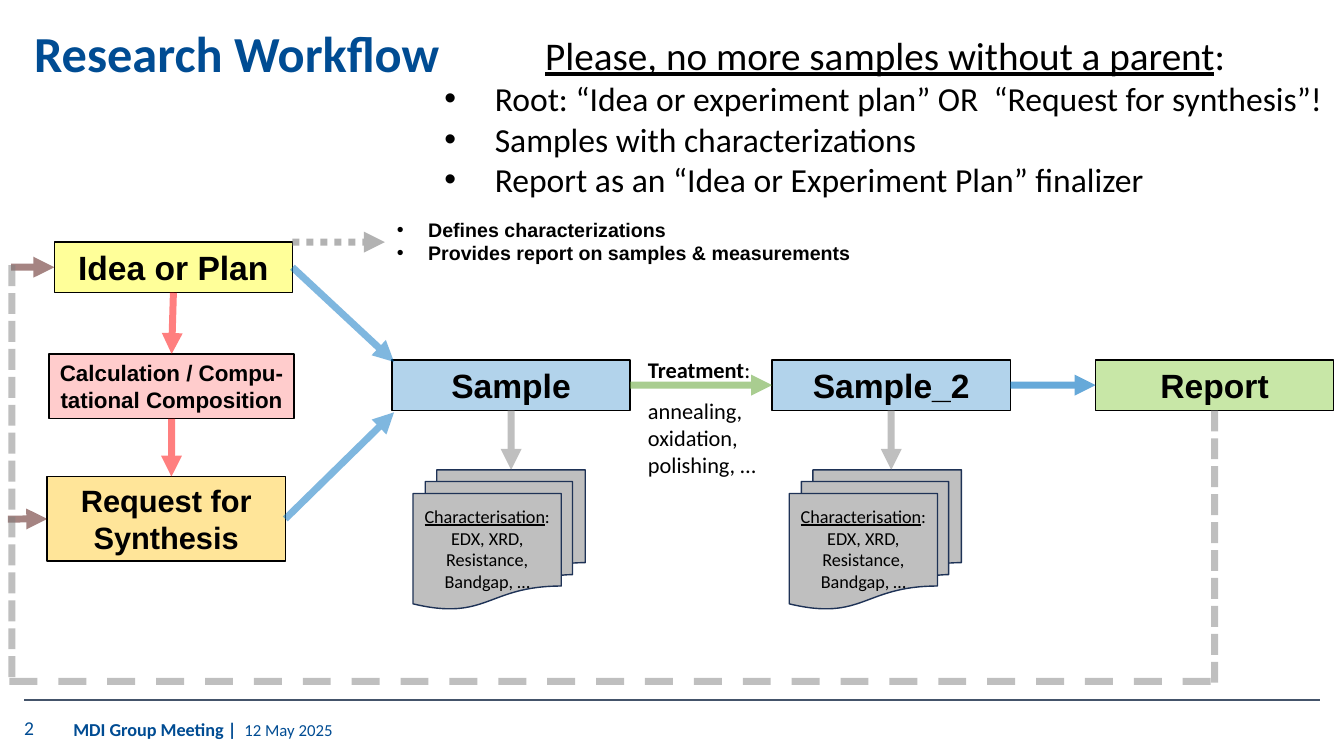
from pptx import Presentation
from pptx import util as u
from pptx.dml.color import RGBColor
from pptx.enum import dml, shapes, text
from pptx.oxml.ns import qn
from lxml import etree


class Theme:
    heading, body = "Calibri", "Arial"
    ink, brand, rule = "000000", "004C93", "44546A"
    blue, red, brown, grey, green = "0070C0", "FF0000", "4C0B07", "808080", "70AD47"
    yellow, amber, lime, sheet_edge = "FFFF00", "FFC000", "92D050", "1E3256"
    title, advice, advice_item, node = 36, 28, 24, 24
    request, calculation, plan_role, sheet = 22, 16, 14, 13
    number, meeting, date, flow, edge = 14, 13, 12, 5, 1


T = Theme
BOX_W, BOX_H, ROW_TOP = 6, 1.27, 9.07
SHEET_W, SHEET_H, SHEET_TOP = 4.34, 3.51, 11.84

# Content: lengths in cm, opacity in percent
# name: (label, left, top, width, height, colour, opacity, type size)
BOXES = {
    "idea": ("Idea or Plan", 1.37, 6.1, BOX_W, BOX_H, T.yellow, 40, T.node),
    "calculation": ("Calculation / Compu-tational Composition",
                    1.24, 8.92, 6.17, 1.63, T.red, 20, T.calculation),
    "request": ("Request for Synthesis", 1.19, 12.01, BOX_W, 2.13, T.amber, 40, T.request),
    "sample": ("Sample", 9.88, ROW_TOP, BOX_W, BOX_H, T.blue, 30, T.node),
    "sample_2": ("Sample_2", 19.46, ROW_TOP, BOX_W, BOX_H, T.blue, 30, T.node),
    "report": ("Report", 27.61, ROW_TOP, BOX_W, BOX_H, T.lime, 50, T.node),
}
SHEET_OWNERS = ("sample", "sample_2")
SHEET_OFFSET = 0.53
SHEET_TEXT = [("Characterisation", {"underline": True}), (":", {}), ("\v", {}),
              ("EDX, XRD, Resistance, Bandgap, …", {})]

# Ends are points or (box, side); sides run 0 top, 1 left, 2 bottom, 3 right
TOP, LEFT, BOTTOM, RIGHT = range(4)
ARROWS = [
    (("idea", BOTTOM), ("calculation", TOP), T.red, 50),
    (("calculation", BOTTOM), (4.32, 12.01), T.red, 50),
    (("idea", RIGHT), (9.93, 9.12), T.blue, 50),
    (("request", RIGHT), (9.93, 10.39), T.blue, 50),
    (("sample", RIGHT), ("sample_2", LEFT), T.green, 60),
    (("sample_2", RIGHT), ("report", LEFT), T.blue, 60),
    ((0.28, 6.73), ("idea", LEFT), T.brown, 50),
    ((0.2, 13.08), ("request", LEFT), T.brown, 50),
]
FEEDBACK = [
    (("report", BOTTOM), (30.61, 17.25), dml.MSO_LINE.SQUARE_DOT),
    ((30.51, 17.17), (0.23, 17.17), dml.MSO_LINE.DASH),
    ((0.3, 6.68), (0.3, 17.17), dml.MSO_LINE.SQUARE_DOT),
]

ADVICE_TITLE = [("Please, no more samples without a parent", {"underline": True}), (":", {})]
ADVICE = ["Root: “Idea or experiment plan” OR  “Request for synthesis”!",
          "Samples with characterizations",
          "Report as an “Idea or Experiment Plan” finalizer"]
PLAN_ROLES = ["Defines characterizations", "Provides report on samples & measurements"]
TREATMENT = [[("Treatment", {"bold": True}), (":", {})],
             "annealing,", "oxidation,", "polishing, …"]
FOOTER = [("MDI Group Meeting | ", {"bold": True}), (" 12 May 2025", {"size": u.Pt(T.date)})]

prs = Presentation()
prs.slide_width, prs.slide_height = u.Cm(33.87), u.Cm(19.05)
slide = prs.slides.add_slide(prs.slide_layouts[6])


def rgb(value):
    return RGBColor.from_string(value)


def set_opacity(shape, percent):
    colour = next(shape.element.spPr.iter(qn("a:srgbClr")))
    etree.SubElement(colour, qn("a:alpha"), val=str(percent * 1000))


def write(paragraph, content, size, font, colour=T.ink, bold=False):
    """Content is a string, or a list of (string, font settings)."""
    if isinstance(content, str):
        content = [(content, {})]
    for words, settings in content:
        if words == "\v":
            paragraph.add_line_break()
            continue
        run = paragraph.add_run()
        run.text = words
        run.font.name, run.font.size, run.font.bold = font, u.Pt(size), bold
        run.font.color.rgb = rgb(colour)
        for key, value in settings.items():
            setattr(run.font, key, value)


def set_indent(paragraph, left, hanging=0.0):
    props = paragraph._p.get_or_add_pPr()
    props.set("marL", str(u.Cm(left)))
    props.set("indent", str(-u.Cm(hanging)))
    if hanging:
        etree.SubElement(props, qn("a:buFont"), typeface="Arial")
        etree.SubElement(props, qn("a:buChar"), char="•")


def add_text(left, top, width, height, lines, size, font,
             anchor=text.MSO_ANCHOR.TOP, **style):
    frame = slide.shapes.add_textbox(*map(u.Cm, (left, top, width, height))).text_frame
    frame.word_wrap, frame.vertical_anchor = True, anchor
    for i, line in enumerate(lines):
        paragraph = frame.add_paragraph() if i else frame.paragraphs[0]
        write(paragraph, line, size, font, **style)
    return frame


def add_block(kind, frame_cm, colour, opacity, edge, content, size, font, anchor, bold):
    block = slide.shapes.add_shape(kind, *map(u.Cm, frame_cm))
    block.shadow.inherit = False
    block.fill.solid()
    block.fill.fore_color.rgb = rgb(colour)
    set_opacity(block, opacity)
    block.line.color.rgb, block.line.width = rgb(edge), u.Pt(T.edge)
    block.text_frame.word_wrap, block.text_frame.vertical_anchor = True, anchor
    paragraph = block.text_frame.paragraphs[0]
    paragraph.alignment = text.PP_ALIGN.CENTER
    write(paragraph, content, size, font, bold=bold)
    return block


def add_line(start, end, colour, opacity=100, width=T.flow, dash=None, arrow=False):
    joined = [isinstance(point[0], str) for point in (start, end)]
    ends = [(0, 0) if is_box else point for is_box, point in zip(joined, (start, end))]
    line = slide.shapes.add_connector(shapes.MSO_CONNECTOR.STRAIGHT,
                                      *(u.Cm(n) for point in ends for n in point))
    if joined[0]:
        line.begin_connect(nodes[start[0]], start[1])
    if joined[1]:
        line.end_connect(nodes[end[0]], end[1])
    line.line.color.rgb, line.line.width = rgb(colour), u.Pt(width)
    if dash:
        line.line.dash_style = dash
    if opacity < 100:
        set_opacity(line, opacity)
    if arrow:
        etree.SubElement(line.element.spPr.find(qn("a:ln")), qn("a:tailEnd"), type="triangle")
    etree.SubElement(line.element.spPr, qn("a:effectLst"))


# Title and footer
heading = add_text(0.61, 0.3, 11, 2.21, ["Research Workflow"], T.title, T.heading,
                   text.MSO_ANCHOR.MIDDLE, colour=T.brand, bold=True)
heading.paragraphs[0].line_spacing = 0.9
add_line((0.61, 17.63), (33.27, 17.63), T.rule, width=1.5)
number = add_text(0.61, 17.75, 1.35, 1.19, ["2"], T.number, T.heading,
                  text.MSO_ANCHOR.MIDDLE, colour=T.brand)
number.margin_left = 0
add_text(1.6, 17.7, 13.87, 1.35, [FOOTER], T.meeting, T.heading,
         text.MSO_ANCHOR.MIDDLE, colour=T.brand)

# Workflow boxes
nodes = {}
for name, (label, *frame_cm, colour, opacity, size) in BOXES.items():
    nodes[name] = add_block(shapes.MSO_SHAPE.RECTANGLE, frame_cm, colour, opacity, T.ink,
                            label, size, T.body, text.MSO_ANCHOR.TOP, True)

# Characterisation sheets under the samples
for owner in SHEET_OWNERS:
    left = BOXES[owner][1]
    sheet_left = left + (SHEET_OFFSET if owner == "sample" else SHEET_OFFSET - 0.1)
    add_block(shapes.MSO_SHAPE.FLOWCHART_MULTIDOCUMENT,
              (sheet_left, SHEET_TOP, SHEET_W, SHEET_H), T.grey, 50, T.sheet_edge,
              SHEET_TEXT, T.sheet, T.heading, text.MSO_ANCHOR.MIDDLE, False)
    add_line((owner, BOTTOM), (left + BOX_W / 2, SHEET_TOP), T.grey, 50, arrow=True)

# Flow arrows and the feedback loop
for start, end, colour, opacity in ARROWS:
    add_line(start, end, colour, opacity, arrow=True)
for start, end, dash in FEEDBACK:
    add_line(start, end, T.grey, 50, dash=dash)
add_line((7.37, 6.1), (9.7, 6.1), T.grey, 60, dash=dml.MSO_LINE.ROUND_DOT, arrow=True)

# Treatment note
treatment = add_text(16.08, 8.86, 3.38, 3.33, TREATMENT, T.calculation, T.heading)
treatment.paragraphs[1].space_before = u.Pt(10)

# Role of the plan
roles = add_text(9.75, 5.36, 12.45, 1.45, PLAN_ROLES, T.plan_role, T.body, bold=True)
for role in roles.paragraphs:
    set_indent(role, 0.79, 0.79)

# Advice
advice = add_text(10.95, 0.66, 22.92, 4.6, [ADVICE_TITLE], T.advice, T.heading)
advice.margin_right = 0
set_indent(advice.paragraphs[0], 2.54)
for item in ADVICE:
    paragraph = advice.add_paragraph()
    write(paragraph, item, T.advice_item, T.heading)
    set_indent(paragraph, 1.27, 1.27)

prs.save("out.pptx")
